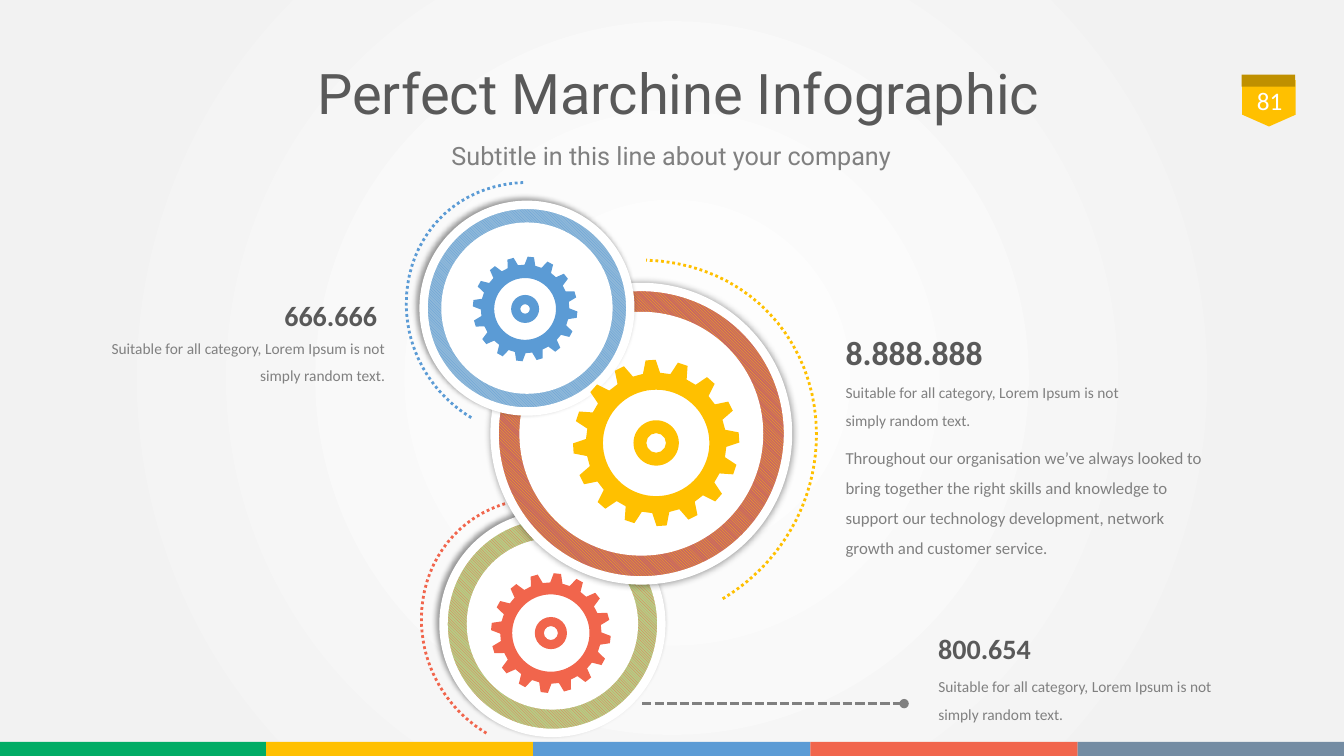
from math import cos, sin, radians
from lxml import etree
from pptx import Presentation
from pptx.dml.color import RGBColor
from pptx.enum import dml, shapes, text
from pptx.oxml import parse_xml
from pptx.oxml.ns import qn
from pptx.util import Pt

GREEN, YELLOW, BLUE, RED, SLATE = "00AC65", "FFC000", "5B9BD5", "F1654C", "748CA3"
WHITE, DARK, GREY = "FFFFFF", "595959", "808080"
LEFT, CENTER, RIGHT = text.PP_ALIGN.LEFT, text.PP_ALIGN.CENTER, text.PP_ALIGN.RIGHT
MIDDLE = text.MSO_ANCHOR.MIDDLE
OVAL = shapes.MSO_SHAPE.OVAL

# Content: all lengths in points
TITLE = "Perfect Marchine Infographic"
LOREM = "Suitable for all category, Lorem Ipsum is not simply random text."
STORY = ("Throughout our organisation we’ve always looked to bring together the right skills "
         "and knowledge to support our technology development, network growth and customer service.")
# text, box, size, colour, alignment, line spacing, bold, font
TEXTS = [
    ("81", (884.9, 53.3, 43.9, 37.4), 18, WHITE, CENTER, 1, False, "Calibri"),
    ("666.666", (195.1, 209.5, 81.4, 31.7), 20, DARK, RIGHT, 1, True, "Calibri"),
    (LOREM, (69.8, 231.8, 212.4, 45.4), 11, GREY, RIGHT, 1.5, False, "Calibri"),
    ("800.654", (663.1, 447.8, 81.4, 31.7), 20, DARK, LEFT, 1, True, "Calibri"),
    (LOREM, (663.1, 473.8, 212.4, 45.4), 11, GREY, LEFT, 1.5, False, "Calibri"),
    ("8.888.888", (596.9, 233.3, 113, 36), 24, DARK, LEFT, 1, True, "Calibri"),
    (LOREM, (596.9, 263.5, 212.4, 45.4), 11, GREY, LEFT, 1.5, False, "Calibri"),
    (STORY, (596.9, 308.9, 278.6, 94.3), 12, GREY, LEFT, 1.5, False, "Calibri"),
    ("Subtitle in this line about your company", (271.4, 96.5, 416.2, 28.8),
     18, GREY, CENTER, 1, False, "Roboto"),
]
BAR_EDGES = [0, 190.1, 380.9, 578.9, 769.7, 960]
BAR_COLORS = [GREEN, YELLOW, BLUE, RED, SLATE]
# centre, outer radius, inner radius, stripe colours, shadow (blur, distance, direction)
RINGS = [
    ((394.6, 445.7), 77.8, 61.2, (RED, "B5CD85"), (4, 3, 225)),
    ((458.1, 309.8), 104.8, 87.1, (YELLOW, "C86664"), (5, 0, 0)),
    ((376.4, 220.1), 73.8, 61.2, (BLUE, "8FB8D9"), (4, 3, 225)),
]
# centre, radius, opening ratio, first tooth angle, hub radius, hub hole radius, colour
GEARS = [
    ((393.5, 452.2), 42.8, 0.645, 6.3, 11.5, 5, RED),
    ((468.7, 316.4), 59.4, 0.64, -3.8, 16.2, 7, YELLOW),
    ((375.1, 220.7), 37.4, 0.59, 6.3, 10, 3.4, BLUE),
]
# left, top, width, height, opens to the left, colour
ARCS = [
    (461.5, 185.8, 121.7, 241.9, True, YELLOW),
    (301, 355.7, 84.4, 168, False, RED),
    (290.2, 130.3, 84.4, 168, False, BLUE),
]
# Two Bezier pieces in a unit box
ARC_CURVE = [(0.45, 1), (0.78, 0.9), (1, 0.72), (1, 0.515), (1, 0.24), (0.6, 0.01), (0, 0)]
TEETH, ROOT_RATIO = 16, 0.845

prs = Presentation()
prs.slide_width, prs.slide_height = Pt(960), Pt(540)
slide = prs.slides.add_slide(prs.slide_layouts[5])
tree = slide.shapes


def rgb(value):
    return RGBColor.from_string(value)


def paint(sp, color):
    sp.shadow.inherit = False
    sp.fill.solid()
    sp.fill.fore_color.rgb = rgb(color)
    sp.line.fill.background()
    return sp


def add_shape(kind, box, color):
    return paint(tree.add_shape(kind, *map(Pt, box)), color)


def around(center, radius):
    return center[0] - radius, center[1] - radius, 2 * radius, 2 * radius


def polar(center, radius, degrees):
    a = radians(degrees)
    return center[0] + radius * cos(a), center[1] + radius * sin(a)


def freeform(contours, close):
    emu = [[(Pt(x), Pt(y)) for x, y in c] for c in contours]
    fb = tree.build_freeform(*emu[0][0])
    fb.add_line_segments(emu[0][1:], close=close)
    for c in emu[1:]:
        fb.move_to(*c[0])
        fb.add_line_segments(c[1:], close=close)
    return fb.convert_to_shape()


def style(p, size, color, align, spacing, bold, font):
    p.alignment, p.line_spacing = align, spacing
    p.font.size, p.font.name, p.font.bold = Pt(size), font, bold
    p.font.color.rgb = rgb(color)


def bezier(a, b, c, d, t):
    s = 1 - t
    return tuple(s**3 * a[i] + 3 * s * s * t * b[i] + 3 * s * t * t * c[i] + t**3 * d[i]
                 for i in (0, 1))


# Radial background
stops = "".join(f'<a:gs pos="{pos}000"><a:srgbClr val="{color}"/></a:gs>'
                for pos, color in [(0, WHITE), (81, "F2F2F2"), (100, "F2F2F2")])
slide._element.cSld.insert(0, parse_xml(
    '<p:bg xmlns:p="http://schemas.openxmlformats.org/presentationml/2006/main" '
    'xmlns:a="http://schemas.openxmlformats.org/drawingml/2006/main"><p:bgPr>'
    f'<a:gradFill rotWithShape="1"><a:gsLst>{stops}</a:gsLst><a:path path="circle">'
    '<a:fillToRect l="50000" t="50000" r="50000" b="50000"/></a:path></a:gradFill>'
    '<a:effectLst/></p:bgPr></p:bg>'))

# Page badge and bottom bar
badge = add_shape(shapes.MSO_SHAPE.PENTAGON, (889.9, 54.7, 33.1, 38.2), YELLOW)
badge.rotation = 90
badge.adjustments[0] = 0.255
add_shape(shapes.MSO_SHAPE.RECTANGLE, (887, 53.3, 38.2, 8.6), "BF9000")
for x, end, color in zip(BAR_EDGES, BAR_EDGES[1:], BAR_COLORS):
    add_shape(shapes.MSO_SHAPE.RECTANGLE, (x, 529.9, end - x, 10.1), color)

# Title
title = tree.title
title.left, title.top, title.width, title.height = map(Pt, (63.4, 40.3, 842.4, 57.6))
title.text_frame.text = TITLE
title.text_frame.vertical_anchor = MIDDLE
style(title.text_frame.paragraphs[0], 40, DARK, CENTER, 0.9, False, "Roboto")

# Dotted arcs
for left, top, width, height, opens_left, color in ARCS:
    curve = [bezier(*ARC_CURVE[k:k + 4], i / 20) for k in (0, 3) for i in range(21)]
    sp = freeform([[(left + width * (u if opens_left else 1 - u), top + height * v)
                    for u, v in curve]], False)
    sp.shadow.inherit = False
    sp.fill.background()
    sp.line.color.rgb = rgb(color)
    sp.line.width = Pt(2)
    sp.line.dash_style = dml.MSO_LINE.ROUND_DOT

# Striped rings
for center, outer, inner, stripes, (blur, dist, angle) in RINGS:
    sp = add_shape(OVAL, around(center, outer), WHITE)
    sp.fill.patterned()
    sp.fill.pattern = dml.MSO_PATTERN.DARK_DOWNWARD_DIAGONAL
    sp.fill.fore_color.rgb, sp.fill.back_color.rgb = map(rgb, stripes)
    sp.line.color.rgb = rgb(WHITE)
    sp.line.width = Pt(6)
    shadow = etree.SubElement(
        sp._element.spPr.find(qn("a:effectLst")), qn("a:outerShdw"), blurRad=str(Pt(blur)),
        dist=str(Pt(dist)), dir=str(angle * 60000), algn="ctr", rotWithShape="0")
    black = etree.SubElement(shadow, qn("a:srgbClr"), val="000000")
    etree.SubElement(black, qn("a:alpha"), val="40000")
    add_shape(OVAL, around(center, inner), WHITE)

# Gears with hubs
for center, radius, opening, start, hub, hole, color in GEARS:
    teeth = [polar(center, radius * ratio, start + i * 360 / TEETH + offset)
             for i in range(TEETH)
             for ratio, offset in [(ROOT_RATIO, -7), (1, -3.5), (1, 3.5), (ROOT_RATIO, 7)]]
    rim = [polar(center, radius * opening, -a) for a in range(0, 360, 5)]
    paint(freeform([teeth, rim], True), color)
    donut = add_shape(shapes.MSO_SHAPE.DONUT, around(center, hub), color)
    donut.adjustments[0] = (hub - hole) / (2 * hub)

# Dashed pointer
pointer = tree.add_connector(shapes.MSO_CONNECTOR.STRAIGHT,
                             *map(Pt, (458.6, 502.6, 645.8, 502.6)))
pointer.line.color.rgb = rgb(GREY)
pointer.line.width = Pt(2.25)
pointer.line.dash_style = dml.MSO_LINE.SQUARE_DOT
etree.SubElement(pointer.line._get_or_add_ln(), qn("a:tailEnd"), type="oval")
etree.SubElement(pointer._element.spPr, qn("a:effectLst"))

# Text blocks
for words, box, size, color, align, spacing, bold, font in TEXTS:
    tf = tree.add_textbox(*map(Pt, box)).text_frame
    tf.word_wrap = not bold
    if words == "81":
        tf.vertical_anchor = MIDDLE
    else:
        tf.auto_size = text.MSO_AUTO_SIZE.SHAPE_TO_FIT_TEXT
    tf.text = words
    style(tf.paragraphs[0], size, color, align, spacing, bold, font)

prs.save("out.pptx")
